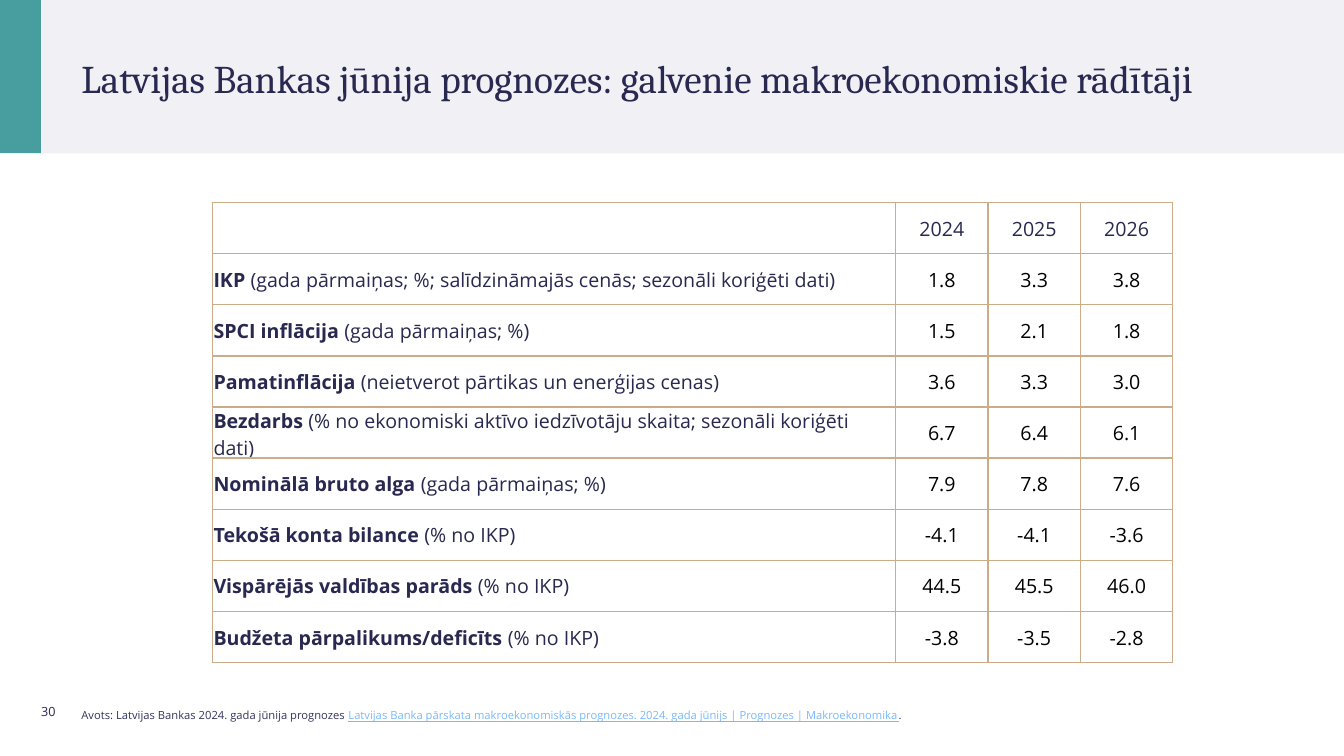
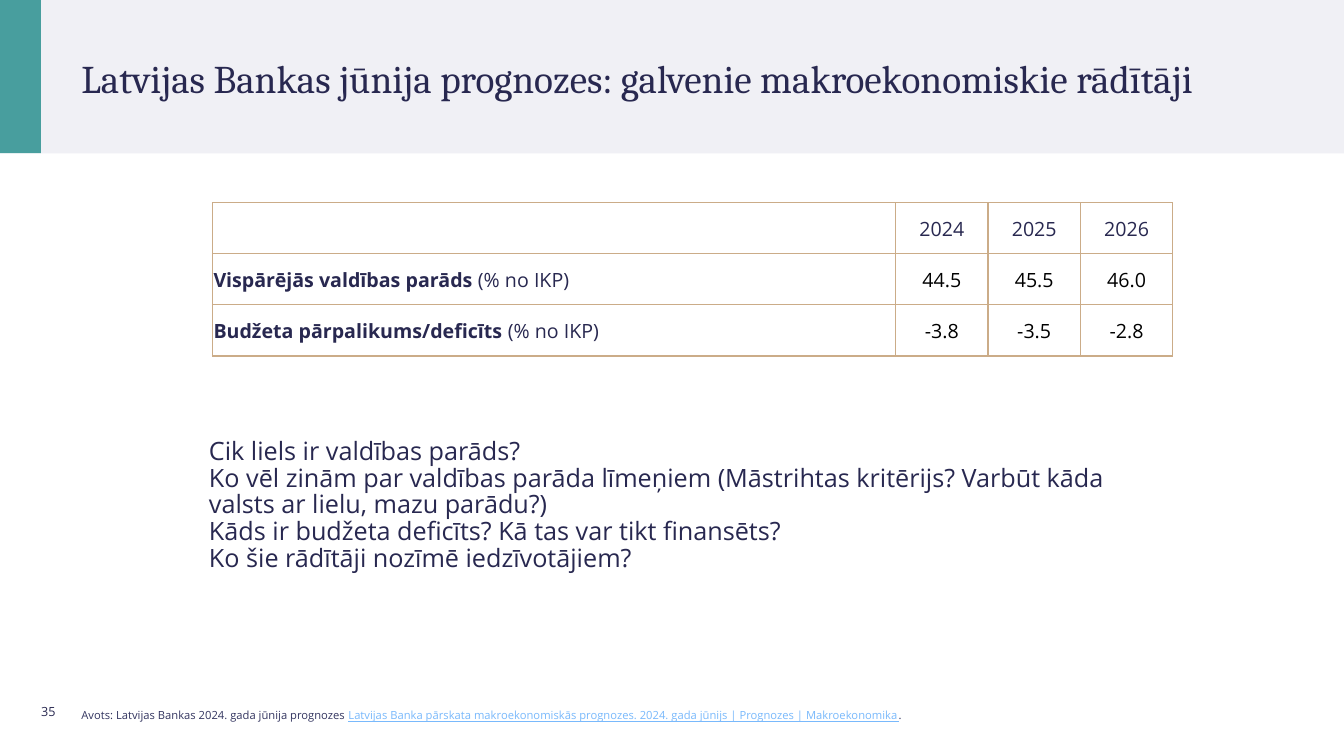
import pptx
import pptx.dml.color
import pptx.enum.shapes
import pptx.enum.text
import pptx.oxml
import pptx.oxml.ns
import pptx.util

Pt = pptx.util.Pt
ANCHOR = pptx.enum.text.MSO_ANCHOR
ALIGN = pptx.enum.text.PP_ALIGN

COLORS = {
    "band": "F0F0F5",
    "accent": "489E9E",
    "panel": "FFFFFF",
    "ink": "282850",
    "source": "333560",
    "link": "79B9FC",
    "border": "CBAC88",
    "value": "000000",
}
HEADING_FONT = "Cambria"
BODY_FONT = "Open Sans"

SLIDE_W, SLIDE_H = 960, 540
BAND_H = 109.5
ACCENT_W = 29.3
TITLE_BOX = (51, 14.4, 860, 82.8)
PAGE_BOX = (22.3, 494, 38, 28.8)
SOURCE_BOX = (51, 500.4, 718.5, 21)
TABLE_ORIGIN = (151.8, 144.8)
QUESTIONS_BOX = (142.2, 310.3, 653.8, 116.6)
LABEL_W, YEAR_W, ROW_H = 488, 66, 36.5

TITLE = "Latvijas Bankas jūnija prognozes: galvenie makroekonomiskie rādītāji"
SOURCE = "Avots: Latvijas Bankas 2024. gada jūnija prognozes "
SOURCE_LINK = ("Latvijas Banka pārskata makroekonomiskās prognozes. "
               "2024. gada jūnijs | Prognozes | Makroekonomika")
YEARS = ("2024", "2025", "2026")
INDICATORS = [
    ("IKP", "(gada pārmaiņas; %; salīdzināmajās cenās; sezonāli koriģēti dati)",
     ("1.8", "3.3", "3.8")),
    ("SPCI inflācija", "(gada pārmaiņas; %)", ("1.5", "2.1", "1.8")),
    ("Pamatinflācija", "(neietverot pārtikas un enerģijas cenas)", ("3.6", "3.3", "3.0")),
    ("Bezdarbs", "(% no ekonomiski aktīvo iedzīvotāju skaita; sezonāli koriģēti dati)",
     ("6.7", "6.4", "6.1")),
    ("Nominālā bruto alga", "(gada pārmaiņas; %)", ("7.9", "7.8", "7.6")),
    ("Tekošā konta bilance", "(% no IKP)", ("-4.1", "-4.1", "-3.6")),
    ("Vispārējās valdības parāds", "(% no IKP)", ("44.5", "45.5", "46.0")),
    ("Budžeta pārpalikums/deficīts", "(% no IKP)", ("-3.8", "-3.5", "-2.8")),
]
QUESTIONS = [
    "Cik liels ir valdības parāds?",
    "Ko vēl zinām par valdības parāda līmeņiem (Māstrihtas kritērijs? "
    "Varbūt kāda valsts ar lielu, mazu parādu?)",
    "Kāds ir budžeta deficīts? Kā tas var tikt finansēts?",
    "Ko šie rādītāji nozīmē iedzīvotājiem?",
]


def rgb(color):
    return pptx.dml.color.RGBColor.from_string(COLORS[color])


def add_run(paragraph, text, size, color="ink", font=BODY_FONT, bold=False, underline=False):
    run = paragraph.add_run()
    run.text = text
    run.font.name = font
    run.font.size = Pt(size)
    run.font.color.rgb = rgb(color)
    run.font.bold = bold
    run.font.underline = underline


def add_panel(slide, box, color):
    panel = slide.shapes.add_shape(
        pptx.enum.shapes.MSO_SHAPE.RECTANGLE, *map(Pt, box))
    panel.shadow.inherit = False
    panel.fill.solid()
    panel.fill.fore_color.rgb = rgb(color)
    panel.line.fill.background()


def add_text_frame(slide, box, anchor=ANCHOR.MIDDLE):
    frame = slide.shapes.add_textbox(*map(Pt, box)).text_frame
    frame.word_wrap = True
    frame.vertical_anchor = anchor
    return frame


def add_title(slide, box):
    frame = add_text_frame(slide, box)
    add_run(frame.paragraphs[0], TITLE, 28, font=HEADING_FONT)


def add_footer(slide, page_box, source_box, page):
    add_run(add_text_frame(slide, page_box).paragraphs[0], str(page), 9)
    source = add_text_frame(slide, source_box).paragraphs[0]
    add_run(source, SOURCE, 8, "source")
    add_run(source, SOURCE_LINK, 8, "link", underline=True)
    add_run(source, ".", 8, "source")


def style_cell(cell):
    cell.fill.background()
    cell.vertical_anchor = ANCHOR.MIDDLE
    cell.margin_left = cell.margin_right = cell.margin_top = Pt(0.72)
    cell.margin_bottom = 0
    properties = cell._tc.get_or_add_tcPr()
    for position, side in enumerate(("lnL", "lnR", "lnT", "lnB")):
        border = pptx.oxml.parse_xml(
            f'<a:{side} {pptx.oxml.ns.nsdecls("a")} w="{Pt(1)}"><a:solidFill>'
            f'<a:srgbClr val="{COLORS["border"]}"/></a:solidFill></a:{side}>')
        properties.insert(position, border)


def add_centered(cell, text, color):
    paragraph = cell.text_frame.paragraphs[0]
    paragraph.alignment = ALIGN.CENTER
    add_run(paragraph, text, 14, color)


def add_forecast_table(slide, origin, indicators):
    row_count = len(indicators) + 1
    widths = [LABEL_W] + [YEAR_W] * len(YEARS)
    left, top = origin
    forecast = slide.shapes.add_table(
        row_count, len(widths), Pt(left), Pt(top),
        Pt(sum(widths)), Pt(ROW_H * row_count)).table
    forecast.first_row = forecast.horz_banding = False
    for column, width in zip(forecast.columns, widths):
        column.width = Pt(width)
    for row in forecast.rows:
        row.height = Pt(ROW_H)
    for cell in forecast.iter_cells():
        style_cell(cell)
    for column, year in enumerate(YEARS, 1):
        add_centered(forecast.cell(0, column), year, "ink")
    for row, (name, unit, values) in enumerate(indicators, 1):
        label = forecast.cell(row, 0).text_frame.paragraphs[0]
        add_run(label, name + " ", 14, bold=True)
        add_run(label, unit, 14)
        for column, value in enumerate(values, 1):
            add_centered(forecast.cell(row, column), value, "value")


def add_questions(slide, box):
    frame = add_text_frame(slide, box, ANCHOR.TOP)
    for index, question in enumerate(QUESTIONS):
        paragraph = frame.add_paragraph() if index else frame.paragraphs[0]
        paragraph.line_spacing = 0.88
        add_run(paragraph, question, 18)


def add_forecast_slide(deck, page, indicators):
    slide = deck.slides.add_slide(deck.slide_layouts[6])
    slide.background.fill.solid()
    slide.background.fill.fore_color.rgb = rgb("band")
    add_panel(slide, (0, 0, ACCENT_W, BAND_H), "accent")
    add_panel(slide, (0, BAND_H, SLIDE_W, SLIDE_H - BAND_H), "panel")
    add_footer(slide, PAGE_BOX, SOURCE_BOX, page)
    add_title(slide, TITLE_BOX)
    add_forecast_table(slide, TABLE_ORIGIN, indicators)
    return slide


def main():
    deck = pptx.Presentation()
    deck.slide_width, deck.slide_height = Pt(SLIDE_W), Pt(SLIDE_H)
    add_forecast_slide(deck, 30, INDICATORS)
    budget = add_forecast_slide(deck, 35, INDICATORS[-2:])
    add_questions(budget, QUESTIONS_BOX)
    deck.save("out.pptx")


if __name__ == "__main__":
    main()
